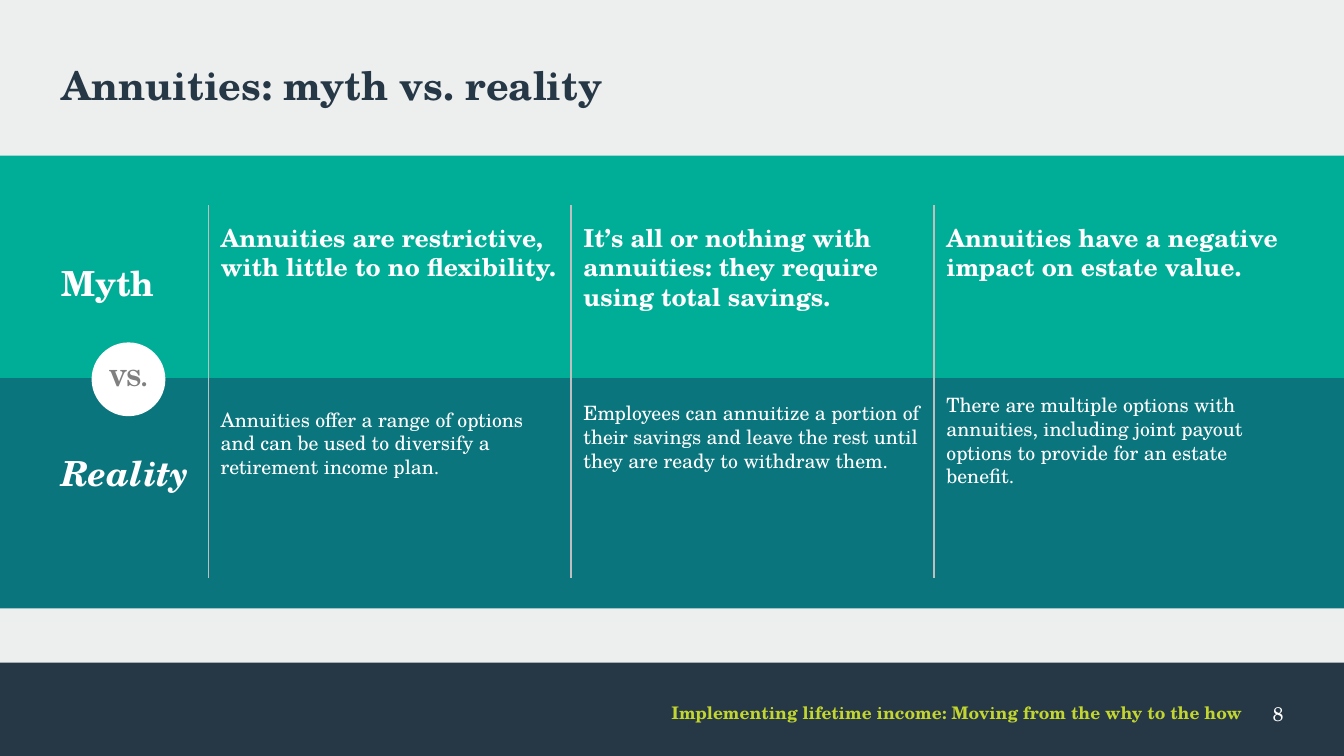
from lxml import etree
from pptx import Presentation, util as u
from pptx.dml.color import RGBColor
from pptx.enum import shapes, text
from pptx.oxml.ns import qn

SCALE = 9144
FONT = "TeX Gyre Schola"
COLORS = {
    "page": "EDEEEE",
    "navy": "263746",
    "green": "00AD97",
    "teal": "0A757D",
    "lime": "C3D62E",
    "white": "FFFFFF",
    "gray": "808080",
    "rule": "BFBFBF",
}
COLUMNS = [
    ("Annuities are restrictive, with little to no flexibility.",
     "Annuities offer a range of options and can be used to diversify a retirement income plan.",
     458),
    ("It’s all or nothing with annuities: they require using total savings.",
     "Employees can annuitize a portion of their savings and leave the rest until they are ready to withdraw them.",
     451),
    ("Annuities have a negative impact on estate value.",
     "There are multiple options with annuities, including joint payout options to provide for an estate benefit.",
     442),
]
COLUMN_LEFT = 248
COLUMN_STEP = 408
RULE_LEFT = 234


def px(*lengths):
    return [u.Emu(length * SCALE) for length in lengths]


def color(name):
    return RGBColor.from_string(COLORS[name])


def set_all(target, values):
    for name, value in values.items():
        setattr(target, name, value)


def write(box, words, size, ink, align="LEFT", after=0, bold=False, italic=False):
    frame = box.text_frame
    set_all(frame, {
        "word_wrap": True,
        "auto_size": text.MSO_AUTO_SIZE.NONE,
        "vertical_anchor": text.MSO_ANCHOR.TOP,
        "margin_left": 0,
        "margin_top": 0,
        "margin_right": 0,
        "margin_bottom": 0,
    })
    para = frame.paragraphs[0]
    set_all(para, {
        "alignment": getattr(text.PP_ALIGN, align),
        "space_before": u.Pt(0),
        "space_after": u.Pt(after),
    })
    span = para.add_run()
    span.text = words
    set_all(span.font, {
        "name": FONT,
        "size": u.Pt(size),
        "bold": bold,
        "italic": italic,
    })
    span.font.color.rgb = color(ink)


def add_title(page, words):
    title = page.shapes.title
    places = px(69, 69, 1374, 113)
    set_all(title, dict(zip(("left", "top", "width", "height"), places)))
    write(title, words, 32, "navy", bold=True)


def add_label(page, at, words, size, ink, **style):
    write(page.shapes.add_textbox(*px(*at)), words, size, ink, **style)


def add_block(page, kind, at, fill):
    block = page.shapes.add_shape(kind, *px(*at))
    block.shadow.inherit = False
    block.fill.solid()
    block.fill.fore_color.rgb = color(fill)
    block.line.fill.background()


def add_rule(page, left):
    rule = page.shapes.add_connector(
        shapes.MSO_CONNECTOR.STRAIGHT, *px(left, 231, left, 650))
    rule.line.color.rgb = color("rule")
    rule.line.width = u.Pt(1)
    etree.SubElement(rule._element.spPr, qn("a:effectLst"))


def add_column(page, index, myth, reality, reality_top):
    left = COLUMN_LEFT + index * COLUMN_STEP
    add_label(page, (left, 250, 386, 158), myth, 20, "white", after=6, bold=True)
    add_label(page, (left, reality_top, 379, 158), reality, 16, "white", after=6)
    add_rule(page, RULE_LEFT + index * COLUMN_STEP)


def main():
    deck = Presentation()
    deck.slide_width, deck.slide_height = px(1511, 850)
    page = deck.slides.add_slide(deck.slide_layouts[5])
    page.background.fill.solid()
    page.background.fill.fore_color.rgb = color("page")

    add_title(page, "Annuities: myth vs. reality")
    for top, height, fill in ((175, 250, "green"), (425, 259, "teal"), (745, 105, "navy")):
        add_block(page, shapes.MSO_SHAPE.RECTANGLE, (0, top, 1511, height), fill)

    for index, column in enumerate(COLUMNS):
        add_column(page, index, *column)

    add_block(page, shapes.MSO_SHAPE.OVAL, (103, 385, 83, 83), "white")
    add_label(page, (103, 410, 83, 59), "VS.", 18, "gray", align="CENTER", bold=True)
    add_label(page, (69, 295, 150, 59), "Myth", 28, "white", bold=True)
    add_label(page, (69, 508, 150, 59), "Reality", 28, "white", bold=True, italic=True)

    add_label(page, (564, 789, 833, 29),
              "Implementing lifetime income: Moving from the why to the how",
              14, "lime", align="RIGHT", bold=True)
    add_label(page, (1403, 789, 40, 33), "8", 16, "white", align="RIGHT")
    deck.save("out.pptx")


if __name__ == "__main__":
    main()
